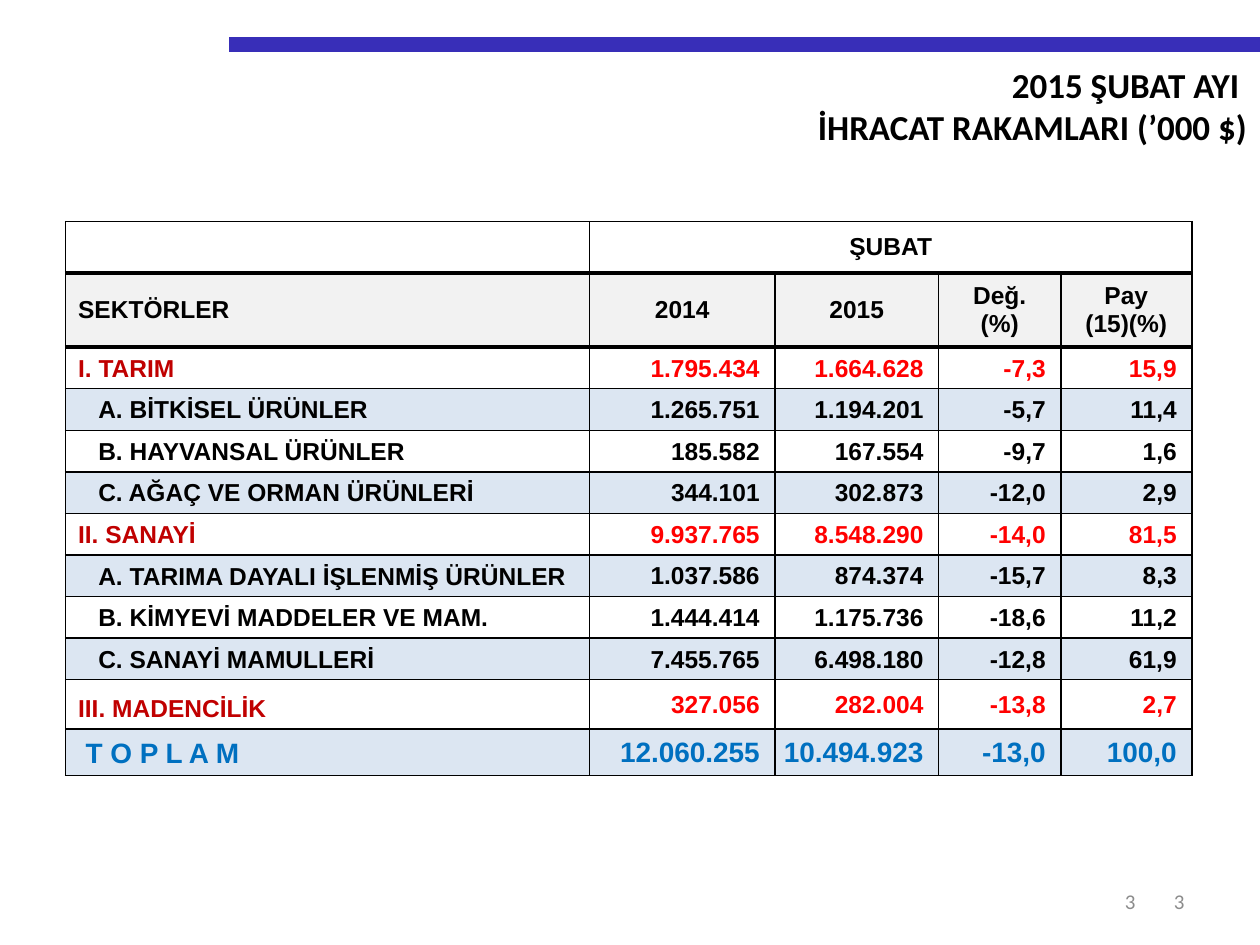
from lxml.etree import SubElement
from pptx import Presentation
from pptx.dml.color import RGBColor
from pptx.enum.shapes import MSO_CONNECTOR
from pptx.enum.text import MSO_ANCHOR, MSO_AUTO_SIZE, PP_ALIGN
from pptx.oxml import parse_xml
from pptx.oxml.ns import nsdecls, qn
from pptx.util import Inches, Pt

BLACK, RED, DARK_RED, BLUE = "000000", "FF0000", "C00000", "0070C0"
GREY, HEADER_FILL, BAND_FILL = "8C8C8C", "F2F2F2", "DCE6F2"


def write(frame, text, size=14, color=BLACK, bold=True, font="Arial", align=PP_ALIGN.LEFT):
    """Fill a text frame, one paragraph for each line of text."""
    for number, line in enumerate(text.split("\n")):
        para = frame.add_paragraph() if number else frame.paragraphs[0]
        para.alignment = align
        span = para.add_run()
        span.text = line
        span.font.name = font
        span.font.size = Pt(size)
        span.font.bold = bold
        span.font.color.rgb = RGBColor.from_string(color)


def set_borders(cell, top, bottom):
    """Draw black cell borders; top and bottom widths are in points."""
    properties = cell._tc.get_or_add_tcPr()
    for side, width in (("L", 1), ("R", 1), ("T", top), ("B", bottom)):
        properties.append(parse_xml(
            f'<a:ln{side} {nsdecls("a")} w="{Pt(width)}"><a:solidFill>'
            f'<a:srgbClr val="{BLACK}"/></a:solidFill></a:ln{side}>'))


deck = Presentation()
deck.slide_width, deck.slide_height = Inches(10), Inches(7.5)
page = deck.slides.add_slide(deck.slide_layouts[5])

# Title and the bar above it
title = page.shapes.title
title.left, title.top = Inches(1.06), Inches(0.45)
title.width, title.height = Inches(8.94), Inches(0.77)
title.text_frame.auto_size = MSO_AUTO_SIZE.NONE
title.text_frame.vertical_anchor = MSO_ANCHOR.TOP
write(title.text_frame, "2015 ŞUBAT AYI \nİHRACAT RAKAMLARI (’000 $)",
      size=20, font="Calibri", align=PP_ALIGN.RIGHT)

bar = page.shapes.add_connector(MSO_CONNECTOR.STRAIGHT, Inches(1.82), Inches(0.35),
                                Inches(10), Inches(0.35))
bar.line.color.rgb = RGBColor.from_string("382EB8")
bar.line.width = Pt(8.5)
SubElement(bar._element.spPr, qn("a:effectLst"))

# Export table
headings = ["SEKTÖRLER", "2014", "2015", "Değ. (%)", "Pay\n(15)(%)"]
sectors = [
    ("I. TARIM", "1.795.434", "1.664.628", "-7,3", "15,9"),
    ("A. BİTKİSEL ÜRÜNLER", "1.265.751", "1.194.201", "-5,7", "11,4"),
    ("B. HAYVANSAL ÜRÜNLER", "185.582", "167.554", "-9,7", "1,6"),
    ("C. AĞAÇ VE ORMAN ÜRÜNLERİ", "344.101", "302.873", "-12,0", "2,9"),
    ("II. SANAYİ", "9.937.765", "8.548.290", "-14,0", "81,5"),
    ("A. TARIMA DAYALI İŞLENMİŞ ÜRÜNLER", "1.037.586", "874.374", "-15,7", "8,3"),
    ("B. KİMYEVİ MADDELER VE MAM.", "1.444.414", "1.175.736", "-18,6", "11,2"),
    ("C. SANAYİ MAMULLERİ", "7.455.765", "6.498.180", "-12,8", "61,9"),
    ("III. MADENCİLİK", "327.056", "282.004", "-13,8", "2,7"),
    ("T O P L A M", "12.060.255", "10.494.923", "-13,0", "100,0"),
]
column_widths = [4.16, 1.47, 1.3, 0.97, 1.04]
row_heights = [0.4, 0.59] + [0.33] * 8 + [0.39, 0.37]

table = page.shapes.add_table(len(row_heights), len(column_widths), Inches(0.52), Inches(1.76),
                              Inches(8.94), Inches(sum(row_heights))).table
table.first_row = table.horz_banding = False
for column, width in zip(table.columns, column_widths):
    column.width = Inches(width)
for row, height in zip(table.rows, row_heights):
    row.height = Inches(height)

for row_number, row in enumerate(table.rows):
    for cell in row.cells:
        set_borders(cell, top=2.25 if row_number in (1, 2) else 1,
                    bottom=2.25 if row_number < 2 else 1)
        cell.vertical_anchor = MSO_ANCHOR.MIDDLE
        if row_number == 1 or (row_number > 2 and row_number % 2):
            cell.fill.solid()
            fill = HEADER_FILL if row_number == 1 else BAND_FILL
            cell.fill.fore_color.rgb = RGBColor.from_string(fill)
        else:
            cell.fill.background()

table.cell(0, 1).merge(table.cell(0, 4))
write(table.cell(0, 1).text_frame, "ŞUBAT", align=PP_ALIGN.CENTER)
for column_number, heading in enumerate(headings):
    write(table.cell(1, column_number).text_frame, heading,
          align=PP_ALIGN.CENTER if column_number else PP_ALIGN.LEFT)

for row_number, (sector, *figures) in enumerate(sectors, start=2):
    size, name_color, figure_color, indent = 14, BLACK, BLACK, 0.16
    if sector.startswith("T O"):
        size, name_color, figure_color, indent = 16, BLUE, BLUE, 0.06
    elif sector.startswith("I"):
        name_color, figure_color, indent = DARK_RED, RED, 0

    name_cell = table.cell(row_number, 0)
    name_cell.vertical_anchor = MSO_ANCHOR.BOTTOM
    name_cell.margin_left = Inches(0.1 + indent)
    write(name_cell.text_frame, sector, size=size, color=name_color)

    for column_number, figure in enumerate(figures, start=1):
        cell = table.cell(row_number, column_number)
        cell.margin_left = cell.margin_top = Inches(0.01)
        cell.margin_right, cell.margin_bottom = Inches(0.12), Inches(0)
        write(cell.text_frame, figure, size=size, color=figure_color, align=PP_ALIGN.RIGHT)

# Page numbers
for left, width in ((7.17, 2.33), (7.01, 2.1)):
    box = page.shapes.add_textbox(Inches(left), Inches(6.95), Inches(width), Inches(0.4))
    box.text_frame.word_wrap = True
    box.text_frame.vertical_anchor = MSO_ANCHOR.MIDDLE
    write(box.text_frame, "3", size=12, color=GREY, bold=False, font="Calibri",
          align=PP_ALIGN.RIGHT)

deck.save("out.pptx")
